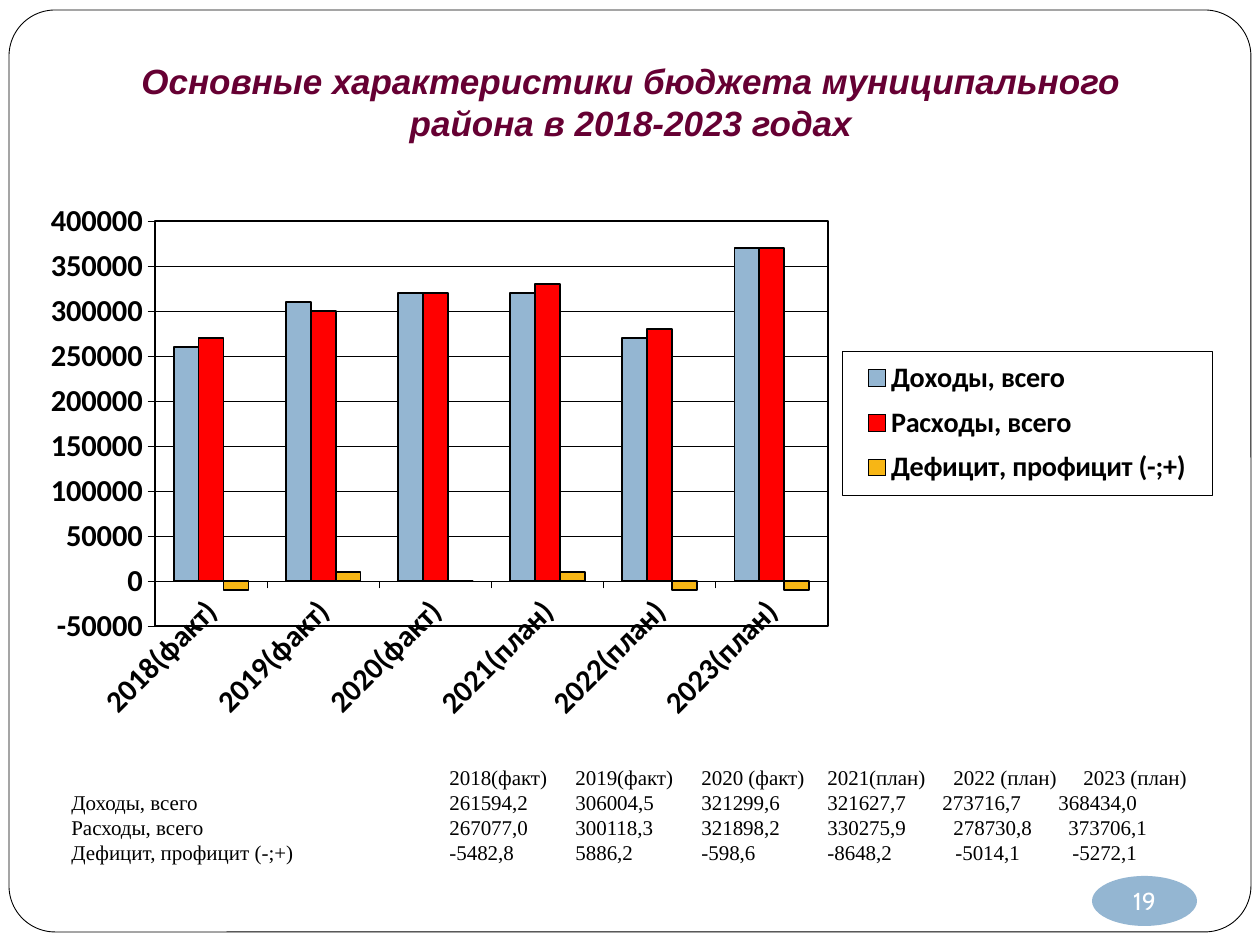
from lxml import etree
from pptx import Presentation
from pptx.chart.data import CategoryChartData
from pptx.dml.color import RGBColor
from pptx.enum.chart import XL_CHART_TYPE, XL_LEGEND_POSITION, XL_TICK_MARK
from pptx.enum.shapes import MSO_SHAPE
from pptx.enum.text import MSO_ANCHOR, PP_ALIGN
from pptx.oxml import parse_xml
from pptx.oxml.ns import nsdecls, qn
from pptx.util import Pt

COLUMNS = XL_CHART_TYPE.COLUMN_CLUSTERED
LEGEND_RIGHT = XL_LEGEND_POSITION.RIGHT
TICK_OUTSIDE = XL_TICK_MARK.OUTSIDE
ROUNDED, OVAL = MSO_SHAPE.ROUNDED_RECTANGLE, MSO_SHAPE.OVAL
MIDDLE, BOTTOM = MSO_ANCHOR.MIDDLE, MSO_ANCHOR.BOTTOM
CENTER, LEFT = PP_ALIGN.CENTER, PP_ALIGN.LEFT

PX = 914400 / 126
COLORS = {"black": "000000", "white": "FFFFFF", "title": "660033",
          "income": "94B6D2", "expense": "FF0000", "balance": "F7B615"}

CHART_BOX = (20, 178, 1197, 571)
PLOT_BOX = (155, 221, 673, 405)
LEGEND_BOX = (842, 351, 370, 144)
CATEGORIES = ["2018(факт)", "2019(факт)", "2020(факт)",
              "2021(план)", "2022(план)", "2023(план)"]
SERIES = [
    ("Доходы, всего", "income",
     [260000, 310000, 320000, 320000, 270000, 370000]),
    ("Расходы, всего", "expense",
     [270000, 300000, 320000, 330000, 280000, 370000]),
    ("Дефицит, профицит (-;+)", "balance",
     [-10000, 10000, 0, 10000, -10000, -10000]),
]

# Each row: its cells and the left edges of its last two columns
FIGURES = [
    (["", "2018(факт)", "2019(факт)", "2020 (факт)",
      "2021(план)", "2022 (план)", "2023 (план)"], (954, 1084)),
    (["Доходы, всего", "261594,2", "306004,5", "321299,6",
      "321627,7", "273716,7", "368434,0"], (943, 1059)),
    (["Расходы, всего", "267077,0", "300118,3", "321898,2",
      "330275,9", "278730,8", "373706,1"], (954, 1069)),
    (["Дефицит, профицит (-;+)", "-5482,8", "5886,2", "-598,6",
      "-8648,2", "-5014,1", "-5272,1"], (956, 1073)),
]
TEXT_LEFT = 72
FIRST_COLUMNS = tuple(range(450, 829, 126))


def px(*lengths):
    return [round(length * PX) for length in lengths]


def color(name):
    return RGBColor.from_string(COLORS[name])


def format_font(font, color_name, **values):
    for key, value in values.items():
        setattr(font, key, value)
    font.color.rgb = color(color_name)


def format_line(line, width, name="black"):
    line.color.rgb = color(name)
    line.width = Pt(width)


def format_frame(frame, **values):
    for key, value in values.items():
        setattr(frame, key, value)


def add_shape(slide, kind, box, fill, line_width=None):
    shape = slide.shapes.add_shape(kind, *px(*box))
    shape.shadow.inherit = False
    shape.fill.solid()
    shape.fill.fore_color.rgb = color(fill)
    if line_width:
        format_line(shape.line, line_width)
    else:
        shape.line.fill.background()
    return shape


def add_text(paragraph, text, alignment, color_name, **font):
    paragraph.alignment = alignment
    run = paragraph.add_run()
    run.text = text
    format_font(run.font, color_name, **font)


def place_title(slide, text):
    title = slide.shapes.title
    title.left, title.top, title.width, title.height = px(64, 0, 1134, 157)
    frame = title.text_frame
    format_frame(frame, word_wrap=True, vertical_anchor=BOTTOM,
                 margin_bottom=px(13)[0])
    add_text(frame.paragraphs[0], text, CENTER, "title",
             name="Arial", size=Pt(20), bold=True, italic=True)


def set_layout(parent, index, box, inner=False):
    """Fix a chart part at a box given in slide px."""
    for old in parent.findall(qn("c:layout")):
        parent.remove(old)
    left, top, width, height = CHART_BOX
    fractions = ((box[0] - left) / width, (box[1] - top) / height,
                 box[2] / width, box[3] / height)
    target = '<c:layoutTarget val="inner"/>' if inner else ""
    modes = "".join(f'<c:{axis}Mode val="edge"/>' for axis in "xy")
    sizes = "".join(f'<c:{key} val="{value:.4f}"/>'
                    for key, value in zip("xywh", fractions))
    parent.insert(index, parse_xml(
        f'<c:layout {nsdecls("c")}><c:manualLayout>{target}{modes}{sizes}'
        '</c:manualLayout></c:layout>'))


def outline(width):
    return parse_xml(
        f'<c:spPr {nsdecls("c", "a")}><a:noFill/><a:ln w="{Pt(width)}"><a:solidFill>'
        f'<a:srgbClr val="{COLORS["black"]}"/></a:solidFill></a:ln></c:spPr>')


def format_axis(axis, font):
    axis.major_tick_mark = TICK_OUTSIDE
    format_line(axis.format.line, 0.25)
    format_font(axis.tick_labels.font, "black", **font)


def add_chart(slide):
    data = CategoryChartData(number_format="General")
    data.categories = CATEGORIES
    for name, _, values in SERIES:
        data.add_series(name, values)
    chart = slide.shapes.add_chart(COLUMNS, *px(*CHART_BOX), data).chart
    font = {"name": "Calibri", "size": Pt(17.4), "bold": True}
    format_font(chart.font, "black", **font)
    chart.has_title = False

    # Columns
    plot = chart.plots[0]
    plot.gap_width, plot.overlap, plot.vary_by_categories = 150, 0, False
    for series, (_, name, _) in zip(plot.series, SERIES):
        series.invert_if_negative = False
        series.format.fill.solid()
        series.format.fill.fore_color.rgb = color(name)
        format_line(series.format.line, 1)

    # Axes
    value_axis, category_axis = chart.value_axis, chart.category_axis
    for axis in (value_axis, category_axis):
        format_axis(axis, font)
    value_axis.minimum_scale, value_axis.maximum_scale = -50000, 400000
    value_axis.major_unit = 50000
    value_axis.has_major_gridlines = True
    format_line(value_axis.major_gridlines.format.line, 0.25)
    body = category_axis._element.find(qn("c:txPr")).find(qn("a:bodyPr"))
    body.set("rot", "-2700000")
    body.set("vert", "horz")

    # Legend and plot frame
    chart.has_legend = True
    legend = chart.legend
    legend.position = LEGEND_RIGHT
    legend.include_in_layout = False
    format_font(legend.font, "black", **{**font, "size": Pt(16.1)})
    set_layout(legend._element, 1, LEGEND_BOX)
    legend._element.find(qn("c:txPr")).addprevious(outline(0.25))
    plot_area = chart._chartSpace.chart.plotArea
    set_layout(plot_area, 0, PLOT_BOX, inner=True)
    plot_area.append(outline(1))


def set_tab_stops(paragraph, positions):
    tabs = etree.SubElement(paragraph._p.get_or_add_pPr(), qn("a:tabLst"))
    for position in px(*(edge - TEXT_LEFT for edge in positions)):
        etree.SubElement(tabs, qn("a:tab"), pos=str(position), algn="l")


def add_figures(slide):
    frame = slide.shapes.add_textbox(*px(59, 758, 1172, 140)).text_frame
    frame.word_wrap = True
    for index, (cells, last_columns) in enumerate(FIGURES):
        paragraph = frame.add_paragraph() if index else frame.paragraphs[0]
        add_text(paragraph, "\t".join(cells), LEFT, "black",
                 name="Times New Roman", size=Pt(12))
        set_tab_stops(paragraph, FIRST_COLUMNS + last_columns)


def add_page_number(slide, number):
    frame = add_shape(slide, OVAL, (1092, 876, 105, 50), "income").text_frame
    format_frame(frame, word_wrap=False, vertical_anchor=MIDDLE, margin_left=0,
                 margin_top=0, margin_right=0, margin_bottom=0)
    add_text(frame.paragraphs[0], number, CENTER, "white", name="Cabin", size=Pt(14))


def main():
    presentation = Presentation()
    presentation.slide_width, presentation.slide_height = px(1260, 945)
    slide = presentation.slides.add_slide(presentation.slide_layouts[5])

    # Page frame, behind the title
    page = add_shape(slide, ROUNDED, (9, 10, 1242, 922), "white", 0.5)
    page.adjustments[0] = 0.05
    slide.shapes.title._element.addprevious(page._element)

    place_title(slide, "Основные характеристики бюджета муниципального "
                       "района в 2018-2023 годах")
    add_chart(slide)
    add_page_number(slide, "19")
    add_figures(slide)
    presentation.save("out.pptx")


if __name__ == "__main__":
    main()
